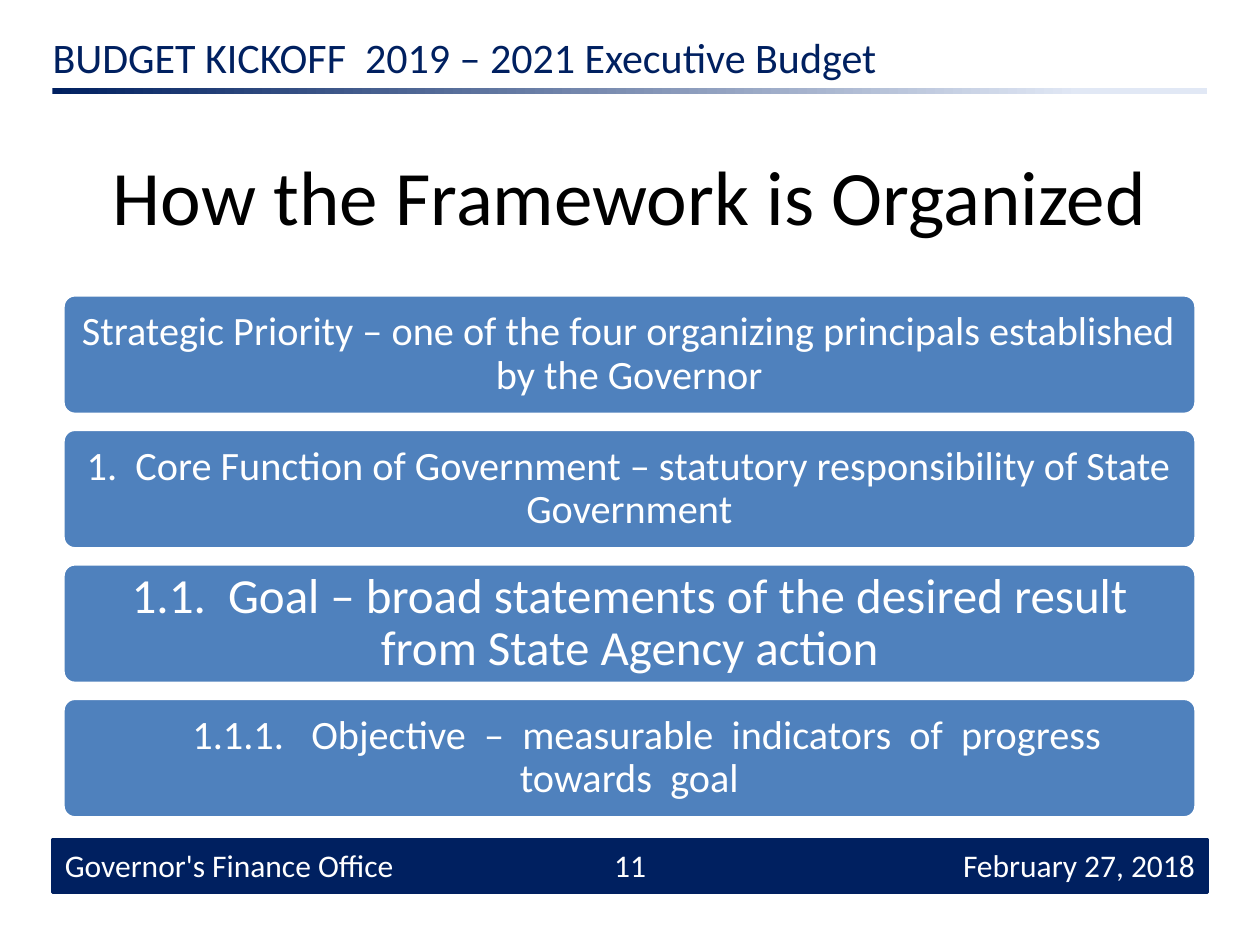
from pptx import Presentation
from pptx.dml.color import RGBColor
from pptx.enum.shapes import MSO_SHAPE
from pptx.enum.text import MSO_ANCHOR, PP_ALIGN
from pptx.util import Pt

RECTANGLE, ROUNDED = MSO_SHAPE.RECTANGLE, MSO_SHAPE.ROUNDED_RECTANGLE
MIDDLE = MSO_ANCHOR.MIDDLE
LEFT, CENTER, RIGHT = PP_ALIGN.LEFT, PP_ALIGN.CENTER, PP_ALIGN.RIGHT

NAVY = RGBColor(0x00, 0x20, 0x60)
PALE_BLUE = RGBColor(0xE1, 0xE8, 0xF5)
BLUE = RGBColor(0x4F, 0x81, 0xBD)
WHITE = RGBColor(0xFF, 0xFF, 0xFF)
BLACK = RGBColor(0x00, 0x00, 0x00)
FONT = "Calibri"

BAR_LEFT, BAR_WIDTH = 30, 660
FOOTER_TOP = 480
LEVEL_TOP, LEVEL_PITCH, LEVEL_HEIGHT = 168.5, 76.85, 68.3

# Text, size, inset, first-line indent
LEVELS = [
    ("Strategic Priority – one of the four organizing principals established "
     "by the Governor", 23, 7.2, 0),
    ("1.  Core Function of Government – statutory responsibility of State "
     "Government", 23, 7.2, 0),
    ("1.1.  Goal – broad statements of the desired result from State Agency "
     "action", 28, 8.4, 0),
    ("1.1.1.   Objective  –  measurable  indicators  of  progress  towards  "
     "goal", 23, 7.2, 26),
]
# Text, left, width, alignment
FOOTERS = [
    ("Governor's Finance Office", 30, 330, LEFT),
    ("11", 276, 168, CENTER),
    ("February 27, 2018", 522, 168, RIGHT),
]


def write(shape, text, size, color, align):
    """Set one vertically centred, wrapped paragraph and return it."""
    frame = shape.text_frame
    frame.text = text
    frame.word_wrap = True
    frame.vertical_anchor = MIDDLE
    para = frame.paragraphs[0]
    para.alignment = align
    font = para.runs[0].font
    font.name, font.size, font.color.rgb = FONT, Pt(size), color
    return para


def add_label(page, text, left, top, width, height, size, color, align):
    box = page.shapes.add_textbox(Pt(left), Pt(top), Pt(width), Pt(height))
    write(box, text, size, color, align)


def add_box(page, kind, left, top, width, height, fill, line):
    box = page.shapes.add_shape(kind, Pt(left), Pt(top), Pt(width), Pt(height))
    box.shadow.inherit = False
    box.fill.solid()
    box.fill.fore_color.rgb = fill
    box.line.color.rgb = line
    box.line.width = Pt(2)
    return box


def add_header_rule(page):
    rule = add_box(page, RECTANGLE, BAR_LEFT, 50.4, BAR_WIDTH, 3.6, NAVY, NAVY)
    rule.line.fill.background()
    rule.fill.gradient()
    rule.fill.gradient_angle = 0
    stops = zip(rule.fill.gradient_stops, (NAVY, PALE_BLUE), (0, 0.89))
    for stop, color, position in stops:
        stop.color.rgb = color
        stop.position = position


def add_level(page, top, text, size, inset, indent):
    box = add_box(page, ROUNDED, 36, top, 647.5, LEVEL_HEIGHT, BLUE, WHITE)
    box.adjustments[0] = 0.1
    para = write(box, text, size, WHITE, CENTER)
    para.line_spacing = 0.9
    frame = box.text_frame
    frame.margin_left = frame.margin_right = Pt(inset)
    frame.margin_top = frame.margin_bottom = Pt(inset)
    if indent:
        properties = para._p.get_or_add_pPr()
        properties.set("marL", "0")
        properties.set("indent", str(Pt(indent)))


def main():
    deck = Presentation()
    deck.slide_width, deck.slide_height = Pt(720), Pt(540)
    page = deck.slides.add_slide(deck.slide_layouts[6])

    add_box(page, RECTANGLE, BAR_LEFT, FOOTER_TOP, BAR_WIDTH, 30, NAVY, NAVY)
    add_header_rule(page)
    add_label(page, "BUDGET KICKOFF  2019 – 2021 Executive Budget",
              23, 18, 667, 29, 24, NAVY, LEFT)
    add_label(page, "How the Framework is Organized",
              36, 66, 648, 90, 44, BLACK, CENTER)
    for row, level in enumerate(LEVELS):
        add_level(page, LEVEL_TOP + row * LEVEL_PITCH, *level)
    for text, left, width, align in FOOTERS:
        add_label(page, text, left, FOOTER_TOP, width, 29, 18, WHITE, align)

    deck.save("out.pptx")


if __name__ == "__main__":
    main()
